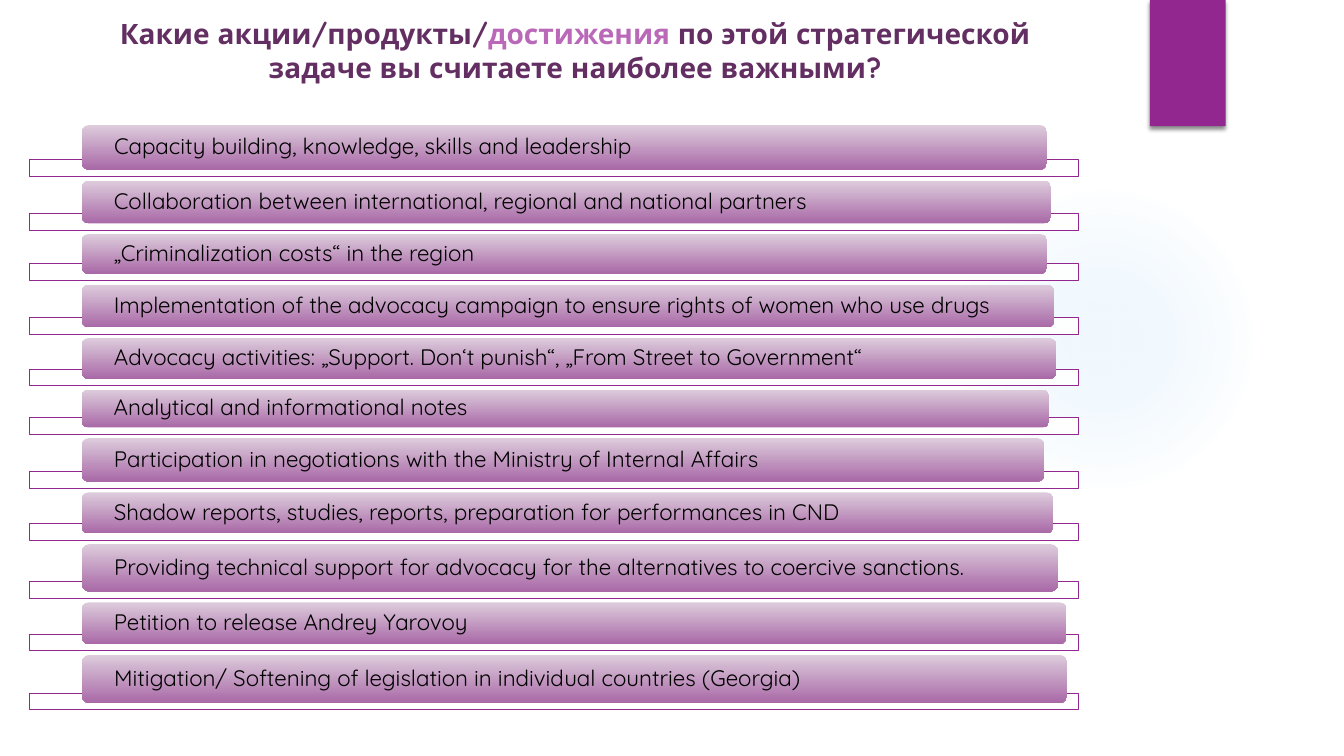
from typing import NamedTuple

from pptx import Presentation, util as u
from pptx.dml.color import RGBColor
from pptx.enum import shapes, text
from pptx.oxml import parse_xml
from pptx.oxml.ns import nsdecls, qn

FONT = "Quicksand"
PURPLE = "92278F"
DARK_PURPLE = "632E62"
LIGHT_PURPLE = "BA69B8"

FIRST_BAR_TOP = 3.15
BAR_LEFT = 2.06
BAR_GAP = 0.27
RAIL_LEFT = 0.74
RAIL_WIDTH = 26.44
RAIL_HEIGHT = 0.42
RAIL_OVERLAP = 0.25


class Achievement(NamedTuple):
    label: str
    width: float
    height: float


ACHIEVEMENTS = [
    Achievement("Capacity building, knowledge, skills and leadership", 24.33, 1.13),
    Achievement("Collaboration between international, regional and national partners", 24.43, 1.08),
    Achievement("„Criminalization costs“ in the region", 24.33, 1.0),
    Achievement("Implementation of the advocacy campaign to ensure rights of women who use drugs",
                24.51, 1.08),
    Achievement("Advocacy activities: „Support. Don‘t punish“, „From Street to Government“",
                24.56, 1.03),
    Achievement("Analytical and informational notes", 24.38, 0.95),
    Achievement("Participation in negotiations with the Ministry of Internal Affairs", 24.26, 1.1),
    Achievement("Shadow reports, studies, reports, preparation for performances in CND", 24.49, 1.03),
    Achievement("Providing technical support for advocacy for the alternatives to coercive sanctions.",
                24.61, 1.2),
    Achievement("Petition to release Andrey Yarovoy", 24.82, 1.05),
    Achievement("Mitigation/ Softening of legislation in individual countries (Georgia)", 24.84, 1.22),
]

TITLE_RUNS = [
    ("Какие акции/продукты/", DARK_PURPLE),
    ("достижения", LIGHT_PURPLE),
    (" по этой стратегической задаче вы считаете наиболее важными?", DARK_PURPLE),
]


def color(value: str) -> RGBColor:
    return RGBColor.from_string(value)


def add_plain_shape(slide, kind, left: float, top: float, width: float, height: float):
    """Add a shape without line or shadow; lengths are in centimetres."""
    shape = slide.shapes.add_shape(kind, u.Cm(left), u.Cm(top), u.Cm(width), u.Cm(height))
    shape.shadow.inherit = False
    shape.line.fill.background()
    return shape


def style_run(run, size: int, value: str, bold: bool = False) -> None:
    run.font.name = FONT
    run.font.size = u.Pt(size)
    run.font.bold = bold
    run.font.color.rgb = color(value)


def add_glow(slide) -> None:
    glow = add_plain_shape(slide, shapes.MSO_SHAPE.OVAL, 23.9, 4.65, 7.82, 7.82)
    glow.fill.background()
    stops = "".join(
        f'<a:gs pos="{position}000"><a:srgbClr val="45A5ED">'
        f'<a:alpha val="{alpha}000"/></a:srgbClr></a:gs>'
        for position, alpha in [(0, 7), (36, 6), (69, 0)]
    )
    gradient = parse_xml(
        f'<a:gradFill {nsdecls("a")}><a:gsLst>{stops}</a:gsLst><a:path path="circle">'
        '<a:fillToRect l="50000" t="50000" r="50000" b="50000"/></a:path></a:gradFill>'
    )
    properties = glow._element.spPr
    properties.replace(properties.find(qn("a:noFill")), gradient)


def add_ribbon(slide) -> None:
    ribbon = add_plain_shape(slide, shapes.MSO_SHAPE.RECTANGLE, 28.98, 0, 1.91, 3.18)
    ribbon.fill.solid()
    ribbon.fill.fore_color.rgb = color(PURPLE)
    ribbon._element.spPr.find(qn("a:effectLst")).append(parse_xml(
        f'<a:outerShdw {nsdecls("a")} blurRad="{u.Pt(3)}" dist="{u.Pt(2)}" dir="5400000" '
        'rotWithShape="0"><a:srgbClr val="000000"><a:alpha val="45000"/></a:srgbClr></a:outerShdw>'
    ))


def add_title(slide) -> None:
    title = slide.shapes.add_textbox(u.Cm(1.42), u.Cm(0.3), u.Cm(26.14), u.Cm(4.19))
    title.text_frame.word_wrap = True
    paragraph = title.text_frame.paragraphs[0]
    paragraph.alignment = text.PP_ALIGN.CENTER
    for wording, value in TITLE_RUNS:
        run = paragraph.add_run()
        run.text = wording
        style_run(run, 20, value, bold=True)


def add_rail(slide, top: float) -> None:
    rail = add_plain_shape(slide, shapes.MSO_SHAPE.RECTANGLE,
                           RAIL_LEFT, top, RAIL_WIDTH, RAIL_HEIGHT)
    rail.fill.solid()
    rail.fill.fore_color.rgb = color("FFFFFF")
    white = rail._element.spPr.find(qn("a:solidFill"))[0]
    white.append(parse_xml(f'<a:alpha {nsdecls("a")} val="90000"/>'))
    rail.line.color.rgb = color(PURPLE)
    rail.line.width = u.Pt(0.75)


def add_bar(slide, achievement: Achievement, top: float) -> None:
    bar = add_plain_shape(slide, shapes.MSO_SHAPE.ROUNDED_RECTANGLE,
                          BAR_LEFT, top, achievement.width, achievement.height)
    bar.fill.gradient()
    bar.fill.gradient_angle = 270
    for stop, value in zip(bar.fill.gradient_stops, ("DDCCDC", "A969A7")):
        stop.color.rgb = color(value)
    frame = bar.text_frame
    frame.text = achievement.label
    frame.word_wrap = True
    frame.vertical_anchor = text.MSO_ANCHOR.MIDDLE
    frame.margin_left = frame.margin_right = u.Cm(0.76)
    frame.margin_top = frame.margin_bottom = 0
    paragraph = frame.paragraphs[0]
    paragraph.alignment = text.PP_ALIGN.LEFT
    paragraph.line_spacing = 0.9
    style_run(paragraph.runs[0], 16, "000000")


def main() -> None:
    presentation = Presentation()
    presentation.slide_width = u.Cm(33.87)
    presentation.slide_height = u.Cm(19.05)
    slide = presentation.slides.add_slide(presentation.slide_layouts[6])
    add_glow(slide)
    add_ribbon(slide)
    add_title(slide)
    top = FIRST_BAR_TOP
    for achievement in ACHIEVEMENTS:
        bottom = top + achievement.height
        add_rail(slide, bottom - RAIL_OVERLAP)
        add_bar(slide, achievement, top)
        top = bottom + BAR_GAP
    presentation.save("out.pptx")


if __name__ == "__main__":
    main()
